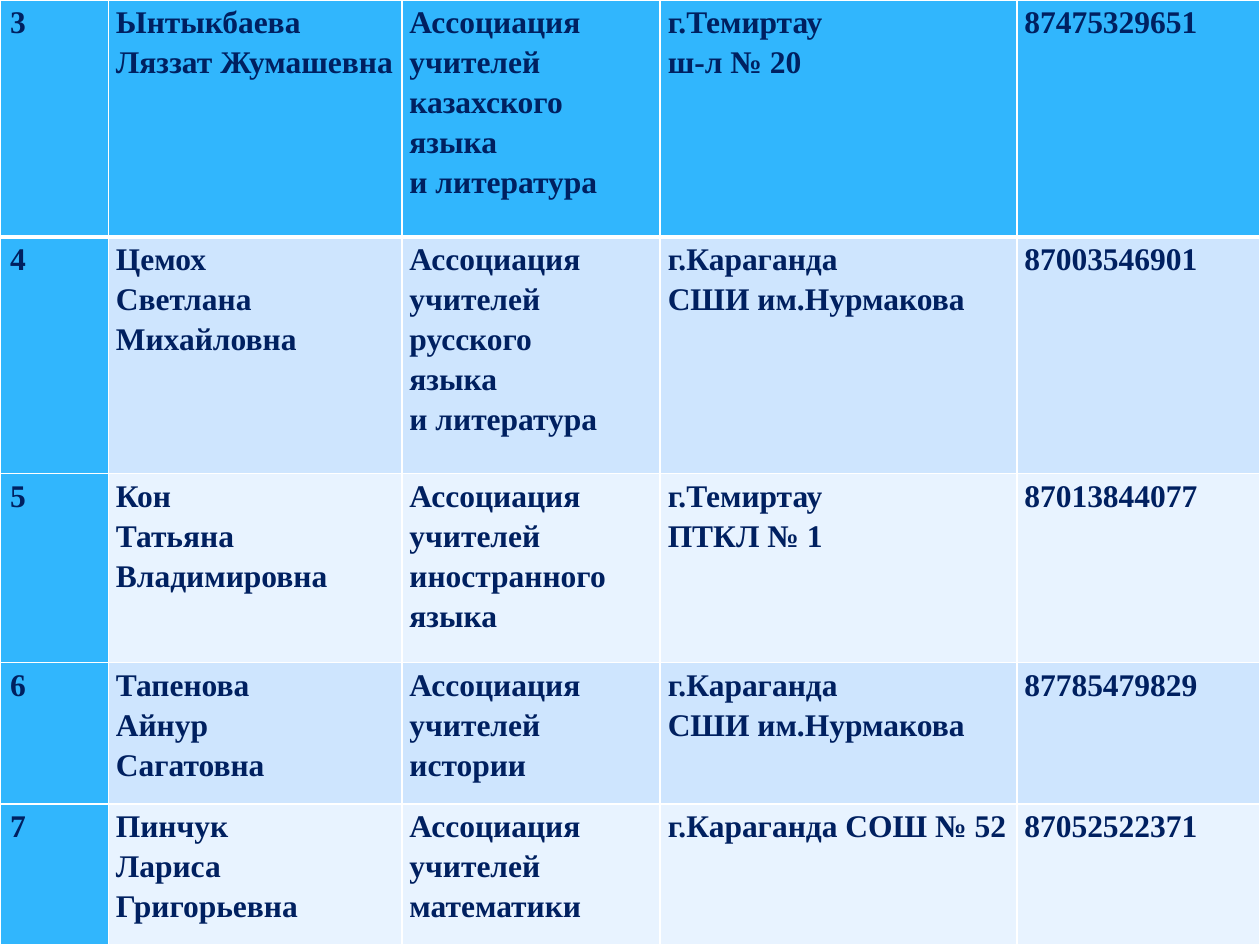
from typing import NamedTuple

from lxml.etree import SubElement
from pptx import Presentation
from pptx.dml.color import RGBColor
from pptx.oxml.ns import qn
from pptx.util import Pt

NAVY = RGBColor(0x00, 0x20, 0x60)
WHITE = RGBColor(0xFF, 0xFF, 0xFF)
BLUE = RGBColor(0x31, 0xB6, 0xFD)
BAND_DARK = RGBColor(0xCE, 0xE5, 0xFE)
BAND_LIGHT = RGBColor(0xE8, 0xF3, 0xFF)

FONT = "Times New Roman"
COLUMN_WIDTHS = (61.92, 167.76, 147.6, 203.76, 138.96)
THIN, THICK = 1, 3


class Teacher(NamedTuple):
    number: str
    name: str
    association: str
    school: str
    phone: str


class Row(NamedTuple):
    height: float
    teacher: Teacher


ROWS = (
    Row(135.36, Teacher("3", "Ынтыкбаева Ляззат Жумашевна",
                        "Ассоциация\nучителей\nказахского\nязыка\nи литература",
                        "г.Темиртау\nш-л № 20", "87475329651")),
    Row(135.36, Teacher("4", "Цемох\nСветлана Михайловна",
                        "Ассоциация\nучителей\nрусского\nязыка\nи литература",
                        "г.Караганда\nСШИ им.Нурмакова", "87003546901")),
    Row(108, Teacher("5", "Кон\nТатьяна Владимировна",
                     "Ассоциация\nучителей\nиностранного\nязыка",
                     "г.Темиртау\nПТКЛ № 1", "87013844077")),
    Row(80.64, Teacher("6", "Тапенова\nАйнур\nСагатовна",
                       "Ассоциация\nучителей\nистории",
                       "г.Караганда\nСШИ им.Нурмакова", "87785479829")),
    Row(80.64, Teacher("7", "Пинчук\nЛариса Григорьевна",
                       "Ассоциация\nучителей\nматематики",
                       "г.Караганда СОШ № 52", "87052522371")),
)


def set_borders(cell, top: float, bottom: float) -> None:
    """Draw white borders; the sides are always thin."""
    tc_pr = cell._tc.get_or_add_tcPr()
    for side, width in (("L", THIN), ("R", THIN), ("T", top), ("B", bottom)):
        ln = SubElement(tc_pr, qn(f"a:ln{side}"), w=str(Pt(width)))
        fill = SubElement(ln, qn("a:solidFill"))
        SubElement(fill, qn("a:srgbClr"), val=str(WHITE))


def cell_color(row: int, column: int) -> RGBColor:
    if row == 0 or column == 0:
        return BLUE
    return BAND_DARK if row % 2 else BAND_LIGHT


def write_cell(cell, text: str, indent: float) -> None:
    cell.margin_left = cell.margin_right = Pt(4.32)
    cell.margin_top = cell.margin_bottom = Pt(0)
    tf = cell.text_frame
    tf.text = text
    for p in tf.paragraphs:
        p.line_spacing = 1.15
        if indent:
            p._p.get_or_add_pPr().set("indent", str(Pt(indent)))
        for r in p.runs:
            r.font.name = FONT
            r.font.size = Pt(18)
            r.font.bold = True
            r.font.color.rgb = NAVY


def add_teacher_table(slide) -> None:
    table = slide.shapes.add_table(
        len(ROWS), len(COLUMN_WIDTHS), Pt(0), Pt(0), Pt(720), Pt(540)).table
    table.first_col = True
    for column, width in zip(table.columns, COLUMN_WIDTHS):
        column.width = Pt(width)
    for i, row in enumerate(ROWS):
        table.rows[i].height = Pt(row.height)
        for j, text in enumerate(row.teacher):
            cell = table.cell(i, j)
            write_cell(cell, text, indent=1.44 if j == 0 else 0)
            set_borders(cell, top=THICK if i == 1 else THIN,
                        bottom=THICK if i == 0 else THIN)
            cell.fill.solid()
            cell.fill.fore_color.rgb = cell_color(i, j)


def main() -> None:
    prs = Presentation()
    prs.slide_width, prs.slide_height = Pt(720), Pt(540)
    add_teacher_table(prs.slides.add_slide(prs.slide_layouts[6]))
    prs.save("out.pptx")


if __name__ == "__main__":
    main()
